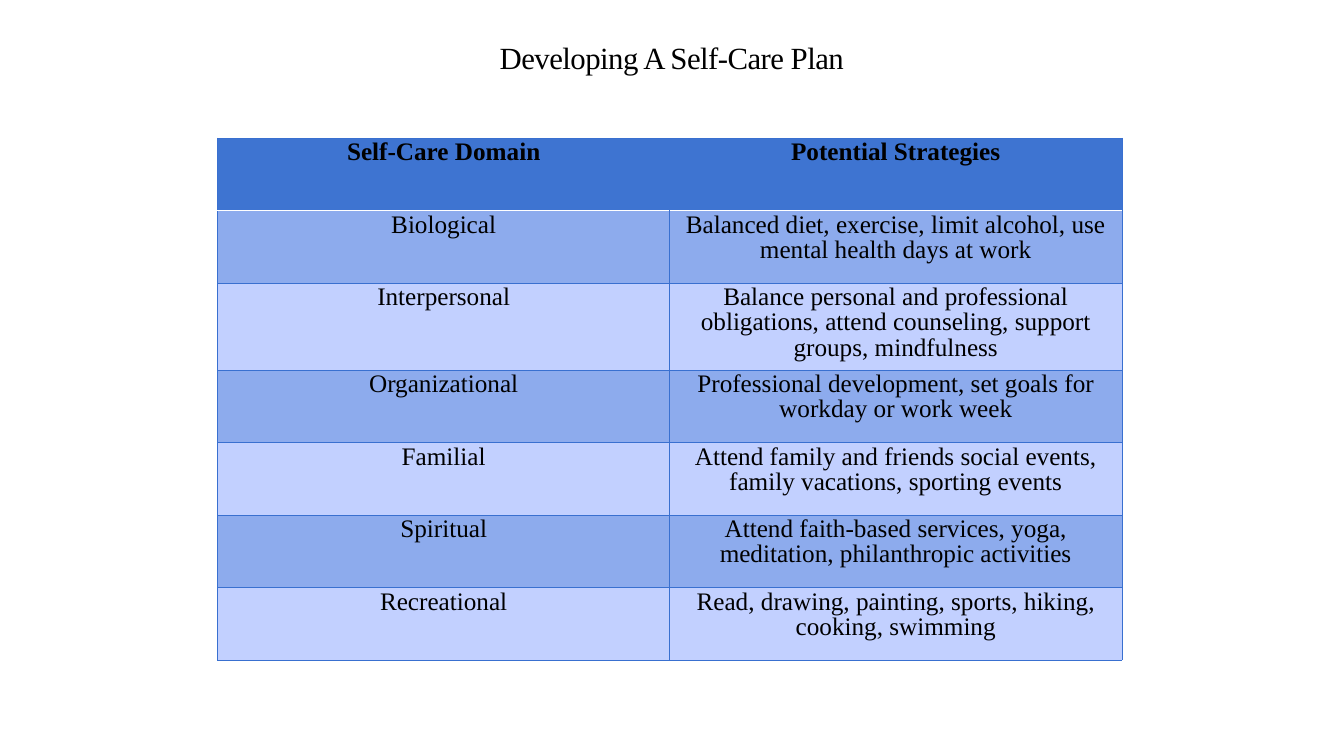
from lxml.etree import SubElement
from pptx import Presentation
from pptx.dml.color import RGBColor
from pptx.enum.text import MSO_ANCHOR, PP_ALIGN
from pptx.oxml.ns import qn
from pptx.util import Inches, Pt

BLACK = RGBColor(0x00, 0x00, 0x00)
WHITE = RGBColor(0xFF, 0xFF, 0xFF)
HEADER_BLUE = RGBColor(0x3E, 0x74, 0xD1)
DARK_BAND = RGBColor(0x8D, 0xAB, 0xED)
LIGHT_BAND = RGBColor(0xC2, 0xD0, 0xFF)
GRID_BLUE = RGBColor(0x39, 0x70, 0xD0)

ROWS = [
    ("Self-Care Domain", "Potential Strategies"),
    ("Biological", "Balanced diet, exercise, limit alcohol, use mental health days at work"),
    ("Interpersonal", "Balance personal and professional obligations, attend counseling, "
                      "support groups, mindfulness"),
    ("Organizational", "Professional development, set goals for workday or work week"),
    ("Familial", "Attend family and friends social events, family vacations, sporting events"),
    ("Spiritual", "Attend faith-based services, yoga, meditation, philanthropic activities"),
    ("Recreational", "Read, drawing, painting, sports, hiking, cooking, swimming"),
]


def write_text(tf, text, size=36, bold=False, line_spacing=0.9, tracking=None):
    """Write one centred paragraph; tracking is in hundredths of a point."""
    tf.word_wrap = True
    p = tf.paragraphs[0]
    p.alignment = PP_ALIGN.CENTER
    p.line_spacing = line_spacing
    r = p.add_run()
    r.text = text
    r.font.name = "Times New Roman"
    r.font.size = Pt(size)
    r.font.bold = bold
    r.font.color.rgb = BLACK
    if tracking is not None:
        r.font._element.set("spc", str(tracking))


def set_borders(cell, borders):
    """Draw (side, colour, points) borders; a colour of None hides the side."""
    tcPr = cell._tc.get_or_add_tcPr()
    for side, color, points in borders:
        ln = SubElement(tcPr, qn(f"a:ln{side}"), w=str(Pt(points)))
        if color is None:
            SubElement(ln, qn("a:noFill"))
        else:
            fill = SubElement(ln, qn("a:solidFill"))
            SubElement(fill, qn("a:srgbClr"), val=str(color))


prs = Presentation()
prs.slide_width = Inches(26.67)
prs.slide_height = Inches(15)
s = prs.slides.add_slide(prs.slide_layouts[6])

title = s.shapes.add_textbox(Inches(1.33), Inches(0.85), Inches(24), Inches(1.89))
tf = title.text_frame
tf.margin_left = tf.margin_right = tf.margin_top = tf.margin_bottom = Inches(0.06)
tf.vertical_anchor = MSO_ANCHOR.TOP
write_text(tf, "Developing A Self-Care Plan", size=44, line_spacing=0.8, tracking=-80)

row_height = Inches(1.44)
table = s.shapes.add_table(len(ROWS), 2, Inches(4.32), Inches(2.74),
                           Inches(17.94), row_height * len(ROWS)).table
for row in table.rows:
    row.height = row_height

for i, texts in enumerate(ROWS):
    header = i == 0
    for j, text in enumerate(texts):
        cell = table.cell(i, j)
        write_text(cell.text_frame, text, bold=header)
        inner = None if header else GRID_BLUE
        set_borders(cell, [
            ("L", GRID_BLUE if j == 0 else inner, 0.75),
            ("R", GRID_BLUE if j == 1 else inner, 0.75),
            ("T", WHITE if i == 1 else GRID_BLUE, 2 if i == 1 else 0.75),
            ("B", WHITE if header else GRID_BLUE, 2 if header else 0.75),
        ])
        cell.fill.solid()
        cell.fill.fore_color.rgb = HEADER_BLUE if header else DARK_BAND if i % 2 else LIGHT_BAND

prs.save("out.pptx")
